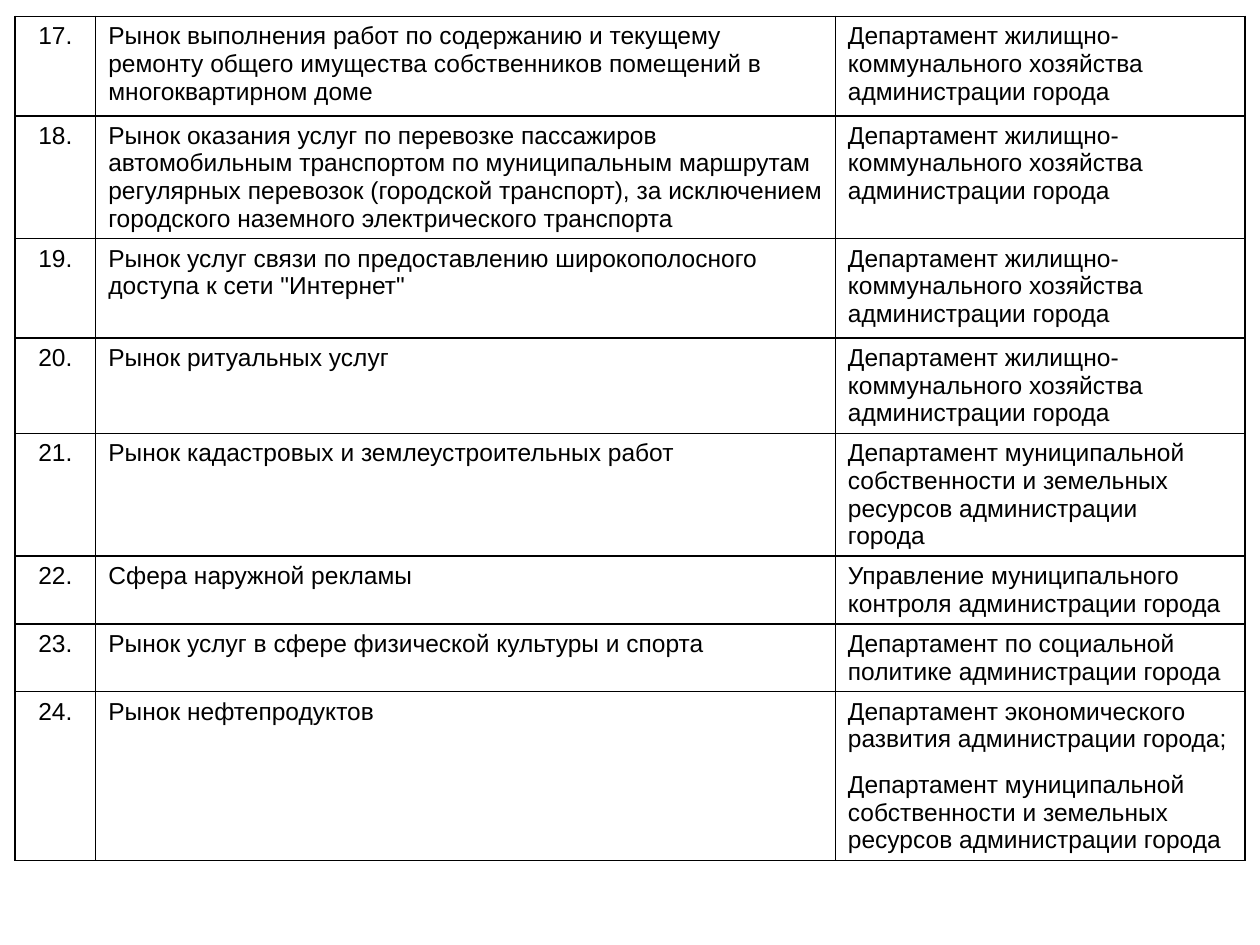
from typing import NamedTuple

from lxml.etree import SubElement
from pptx import Presentation
from pptx.dml.color import RGBColor as RGB
from pptx.enum.text import PP_ALIGN as Align
from pptx.oxml.ns import qn
from pptx.util import Inches, Pt


class Market(NamedTuple):
    name: str
    office: str
    height: float


HOUSING = "Департамент жилищно-коммунального хозяйства администрации города"
LAND = "Департамент муниципальной собственности и земельных ресурсов администрации"
FIRST = 17
WIDTHS = (0.64, 5.87, 3.25)
MARKETS = [
    Market("Рынок выполнения работ по содержанию и текущему ремонту общего "
           "имущества собственников помещений в многоквартирном доме", HOUSING, 0.79),
    Market("Рынок оказания услуг по перевозке пассажиров автомобильным транспортом "
           "по муниципальным маршрутам регулярных перевозок (городской транспорт), "
           "за исключением городского наземного электрического транспорта",
           HOUSING, 0.96),
    Market("Рынок услуг связи по предоставлению широкополосного доступа к сети "
           '"Интернет"', HOUSING, 0.79),
    Market("Рынок ритуальных услуг", HOUSING, 0.75),
    Market("Рынок кадастровых и землеустроительных работ", f"{LAND}\vгорода", 0.79),
    Market("Сфера наружной рекламы",
           "Управление муниципального контроля администрации города", 0.52),
    Market("Рынок услуг в сфере физической культуры и спорта",
           "Департамент по социальной политике администрации города", 0.5),
    Market("Рынок нефтепродуктов",
           "Департамент экономического развития администрации города;\n"
           f"{LAND} города", 0.65),
]


def color(code: str) -> RGB:
    return RGB.from_string(code)


def add_borders(cell, code: str = "000000", width: float = 1) -> None:
    props = cell._tc.get_or_add_tcPr()
    for place, side in enumerate(("lnL", "lnR", "lnT", "lnB")):
        line = SubElement(props, qn(f"a:{side}"), w=str(Pt(width)))
        fill = SubElement(line, qn("a:solidFill"))
        SubElement(fill, qn("a:srgbClr"), val=code)
        props.insert(place, line)  # borders come before the cell fill


def fill_cell(cell, text: str, align: Align) -> None:
    cell.fill.solid()
    cell.fill.fore_color.rgb = color("FFFFFF")
    add_borders(cell)
    cell.text_frame.text = text
    for place, para in enumerate(cell.text_frame.paragraphs):
        para.alignment = align
        if place:
            para.space_before = Pt(10.5)
        for run in para.runs:
            run.font.name = "Arial"
            run.font.size = Pt(14)
            run.font.color.rgb = color("000000")


def add_markets(slide) -> None:
    height = sum(market.height for market in MARKETS)
    table = slide.shapes.add_table(
        len(MARKETS), len(WIDTHS), Inches(0.12), Inches(0.13),
        Inches(sum(WIDTHS)), Inches(height)).table
    table.first_row = False
    table.horz_banding = False
    for column, width in zip(table.columns, WIDTHS):
        column.width = Inches(width)
    for number, (row, market) in enumerate(zip(table.rows, MARKETS), FIRST):
        row.height = Inches(market.height)
        index, name, office = row.cells
        fill_cell(index, f"{number}.", Align.CENTER)
        fill_cell(name, market.name, Align.LEFT)
        fill_cell(office, market.office, Align.LEFT)


def main() -> None:
    deck = Presentation()
    deck.slide_width = Inches(10)
    deck.slide_height = Inches(7.5)
    blank = deck.slide_layouts[6]
    add_markets(deck.slides.add_slide(blank))
    deck.save("out.pptx")


if __name__ == "__main__":
    main()
